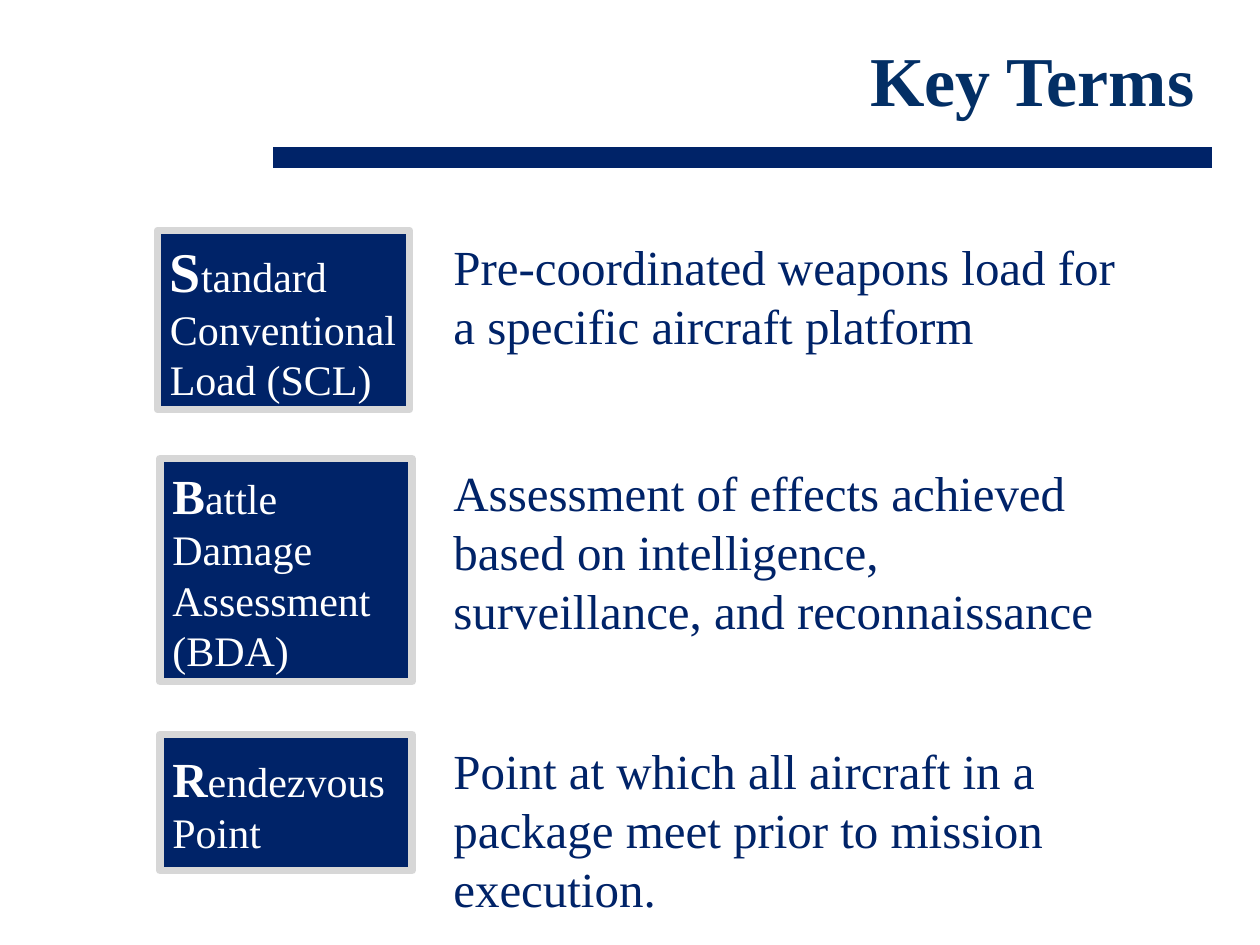
from lxml.etree import SubElement as Sub
from pptx import Presentation
from pptx.dml.color import RGBColor as Rgb
from pptx.enum.shapes import MSO_CONNECTOR as Conn, MSO_SHAPE as Form
from pptx.enum.text import MSO_ANCHOR as Anchor, MSO_AUTO_SIZE as Fit, PP_ALIGN as Align
from pptx.oxml.ns import qn
from pptx.util import Inches, Pt

WIDE, HIGH = 10, 7.5
NAVY, INK, GRAY, WHITE = "002368", "032F65", "D7D7D7", "FFFFFF"
TERMS = [
    (1.25, 1.83, 1.42, 32, "Standard Conventional Load (SCL)",
     1.83, 1.04, "Pre-coordinated weapons load for a specific aircraft platform"),
    (1.27, 3.64, 1.77, 28, "Battle Damage Assessment (BDA)",
     3.62, 1.51, "Assessment of effects achieved based on intelligence, "
     "surveillance, and reconnaissance"),
    (1.27, 5.83, 1.08, 28, "Rendezvous Point",
     5.83, 1.51, "Point at which all aircraft in a package meet prior to mission execution."),
]


def tint(code):
    """Turn a hex string into a colour."""
    return Rgb.from_string(code)


def write(para, text, size=28, color=NAVY, bold=False, align=Align.LEFT):
    """Add a formatted run to a paragraph."""
    para.alignment = align
    run = para.add_run()
    run.text = text
    font = run.font
    font.name, font.size, font.bold = "Times New Roman", Pt(size), bold
    font.color.rgb = tint(color)


class Deck:
    """Hold the style and the current slide."""

    def __init__(self):
        """Start a deck with one title-only slide."""
        self.prs = Presentation()
        self.prs.slide_width, self.prs.slide_height = Inches(WIDE), Inches(HIGH)
        self.slide = self.prs.slides.add_slide(self.prs.slide_layouts[5])
        self.shapes = self.slide.shapes

    def place(self, *shares):
        """Turn shares of the slide into lengths."""
        return [Inches(share * side) for share, side in zip(shares, (WIDE, HIGH) * 2)]

    def title(self, text, *area):
        """Move and fill the title placeholder."""
        head = self.shapes.title
        head.left, head.top, head.width, head.height = self.place(*area)
        frame = head.text_frame
        frame.vertical_anchor = Anchor.MIDDLE
        write(frame.paragraphs[0], text, size=40, color=INK, bold=True, align=Align.RIGHT)

    def rule(self, *ends):
        """Draw the thick line under the title."""
        line = self.shapes.add_connector(Conn.STRAIGHT, *self.place(*ends))
        line.line.color.rgb, line.line.width = tint(NAVY), Pt(12.25)
        Sub(line._element.spPr, qn("a:effectLst"))

    def term(self, text, size, *area):
        """Draw a framed term with a large first letter."""
        box = self.shapes.add_shape(Form.RECTANGLE, *self.place(*area))
        box.shadow.inherit = False
        box.fill.solid()
        box.fill.fore_color.rgb = tint(NAVY)
        box.line.color.rgb, box.line.width = tint(GRAY), Pt(4.33)
        frame = box.text_frame
        frame.word_wrap, frame.vertical_anchor = True, Anchor.MIDDLE
        para = frame.paragraphs[0]
        write(para, text[0], size=size, color=WHITE, bold=True)
        write(para, text[1:], size=24, color=WHITE)

    def note(self, text, *area):
        """Add the meaning of a term."""
        frame = self.shapes.add_textbox(*self.place(*area)).text_frame
        frame.word_wrap, frame.auto_size = True, Fit.SHAPE_TO_FIT_TEXT
        write(frame.paragraphs[0], text)


def main():
    """Build and save the slide."""
    deck = Deck()
    deck.rule(2.17 / WIDE, 1.25 / HIGH, 9.62 / WIDE, 1.25 / HIGH)
    deck.title("Key Terms", 0.58 / WIDE, 0, 9 / WIDE, 1.25 / HIGH)
    for left, top, tall, size, name, row, deep, text in TERMS:
        deck.term(name, size, left / WIDE, top / HIGH, 2 / WIDE, tall / HIGH)
        deck.note(text, 3.5 / WIDE, row / HIGH, 5.58 / WIDE, deep / HIGH)
    deck.prs.save("out.pptx")


if __name__ == "__main__":
    main()
